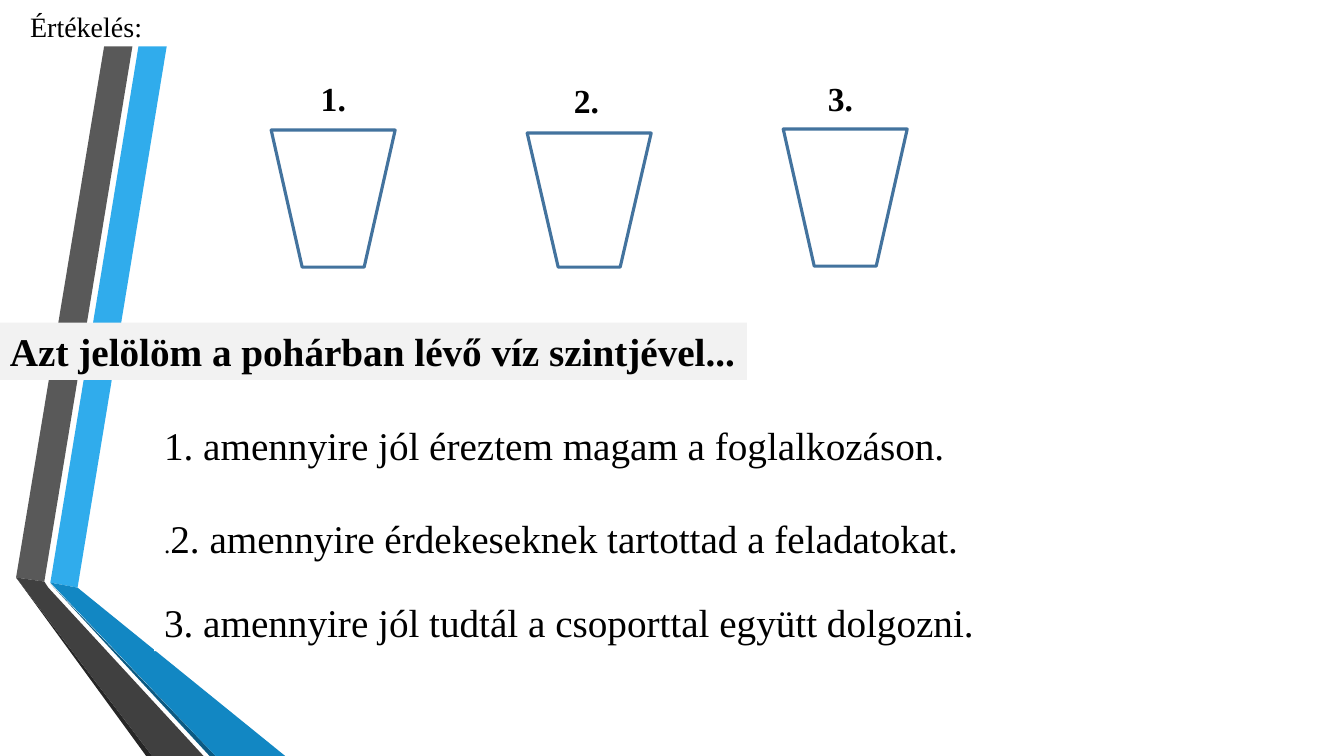
from pptx import Presentation
from pptx.dml.color import RGBColor
from pptx.enum.shapes import MSO_SHAPE
from pptx.enum.text import MSO_ANCHOR, MSO_AUTO_SIZE, PP_ALIGN
from pptx.util import Inches, Pt

COLORS = {
    "white": "FFFFFF", "black": "000000", "band": "F2F2F2", "cup": "43739E",
    "blue": "30ACEC", "blue_fold": "1287C3", "blue_edge": "0C5A82",
    "grey": "595959", "grey_fold": "404040", "grey_edge": "262626",
}
CELL = Inches(0.1)  # grid of 133.3 columns by 75 rows
COLUMNS, ROWS = 133.33, 75

presentation = Presentation()
presentation.slide_width = round(COLUMNS * CELL)
presentation.slide_height = ROWS * CELL
slide = presentation.slides.add_slide(presentation.slide_layouts[6])


def add_block(kind, column, row, width, height, fill="white"):
    shape = slide.shapes.add_shape(
        kind, *(round(length * CELL) for length in (column, row, width, height)))
    shape.shadow.inherit = False
    shape.fill.solid()
    shape.fill.fore_color.rgb = RGBColor.from_string(COLORS[fill])
    shape.line.fill.background()
    return shape


def add_text(shape, runs, bold=False, spacing=1.15, wrap=True, grow=True):
    frame = shape.text_frame
    frame.word_wrap = wrap
    frame.vertical_anchor = MSO_ANCHOR.TOP
    frame.auto_size = MSO_AUTO_SIZE.SHAPE_TO_FIT_TEXT if grow else MSO_AUTO_SIZE.NONE
    paragraph = frame.paragraphs[0]
    paragraph.alignment = PP_ALIGN.LEFT
    paragraph.line_spacing = spacing
    for text, size in runs:
        run = paragraph.add_run()
        run.text = text
        run.font.name = "Times New Roman"
        run.font.size = Pt(size)
        run.font.bold = bold
        run.font.color.rgb = RGBColor.from_string(COLORS["black"])


# Folded ribbons on the left, corners as (column, row)
ribbons = [
    ("blue", [(5, 57.8), (7.7, 58.3), (17.3, 0), (14.5, 0)]),
    ("grey", [(13.9, 0), (11.1, 0), (1.6, 57.3), (4.4, 57.7)]),
    ("grey_edge", [(1.6, 57.3), (14.5, ROWS), (15.1, ROWS)]),
    ("blue_edge", [(5, 57.9), (20.8, ROWS), (21.4, ROWS)]),
    ("blue_fold", [(5, 57.8), (21.4, ROWS), (28.3, ROWS), (7.7, 58.3)]),
    ("grey_fold", [(1.6, 57.3), (15.1, ROWS), (20.2, ROWS), (4.8, 58.3), (4.4, 57.7)]),
]
for color, corners in ribbons:
    points = [(round(column * 10), round(row * 10)) for column, row in corners]
    builder = slide.shapes.build_freeform(*points[0], scale=CELL / 10)
    builder.add_line_segments(points[1:], close=True)
    ribbon = builder.convert_to_shape()
    ribbon.shadow.inherit = False
    ribbon.fill.solid()
    ribbon.fill.fore_color.rgb = RGBColor.from_string(COLORS[color])
    ribbon.line.fill.background()

# Three cups, evenly spaced
for index, (row, height) in enumerate([(12.9, 13.6), (13.2, 13.3), (12.8, 13.6)]):
    cup = add_block(MSO_SHAPE.TRAPEZOID, 26.9 + index * 25.4, row, 12.3, height)
    cup.rotation = 180
    cup.line.color.rgb = RGBColor.from_string(COLORS["cup"])
    cup.line.width = Pt(2.25)

# Cup numbers
number_boxes = [(30.6, 6.4, 5, 5.5), (55.7, 6.6, 5.2, 5), (80.9, 6.4, 5.4, 5)]
for number, box in enumerate(number_boxes, start=1):
    label = add_block(MSO_SHAPE.ROUNDED_RECTANGLE, *box)
    add_text(label, [(f"{number}.", 24)], bold=True, grow=False)

# Statements to rate
statements = [
    (40.6, 6.4, 1.15, [("1. amennyire jól éreztem magam a foglalkozáson.", 28)]),
    (49.8, 6.4, 1.15, [(".", 18), ("2. amennyire érdekeseknek tartottad a feladatokat.", 28)]),
    (58.9, 5.7, 1, [("3. amennyire jól tudtál a csoporttal együtt dolgozni.", 28)]),
]
for row, height, spacing, runs in statements:
    statement = add_block(MSO_SHAPE.RECTANGLE, 15.3, row, 86.3, height)
    add_text(statement, runs, spacing=spacing)

# Heading and instruction band
heading = add_block(MSO_SHAPE.RECTANGLE, 2, 0, 20.9, 4.6)
add_text(heading, [("Értékelés:", 20)])
band = add_block(MSO_SHAPE.RECTANGLE, 0, 32, 74.1, 5.7, "band")
add_text(band, [("Azt jelölöm a pohárban lévő víz szintjével...", 28)],
         bold=True, spacing=1, wrap=False)

presentation.save("out.pptx")
